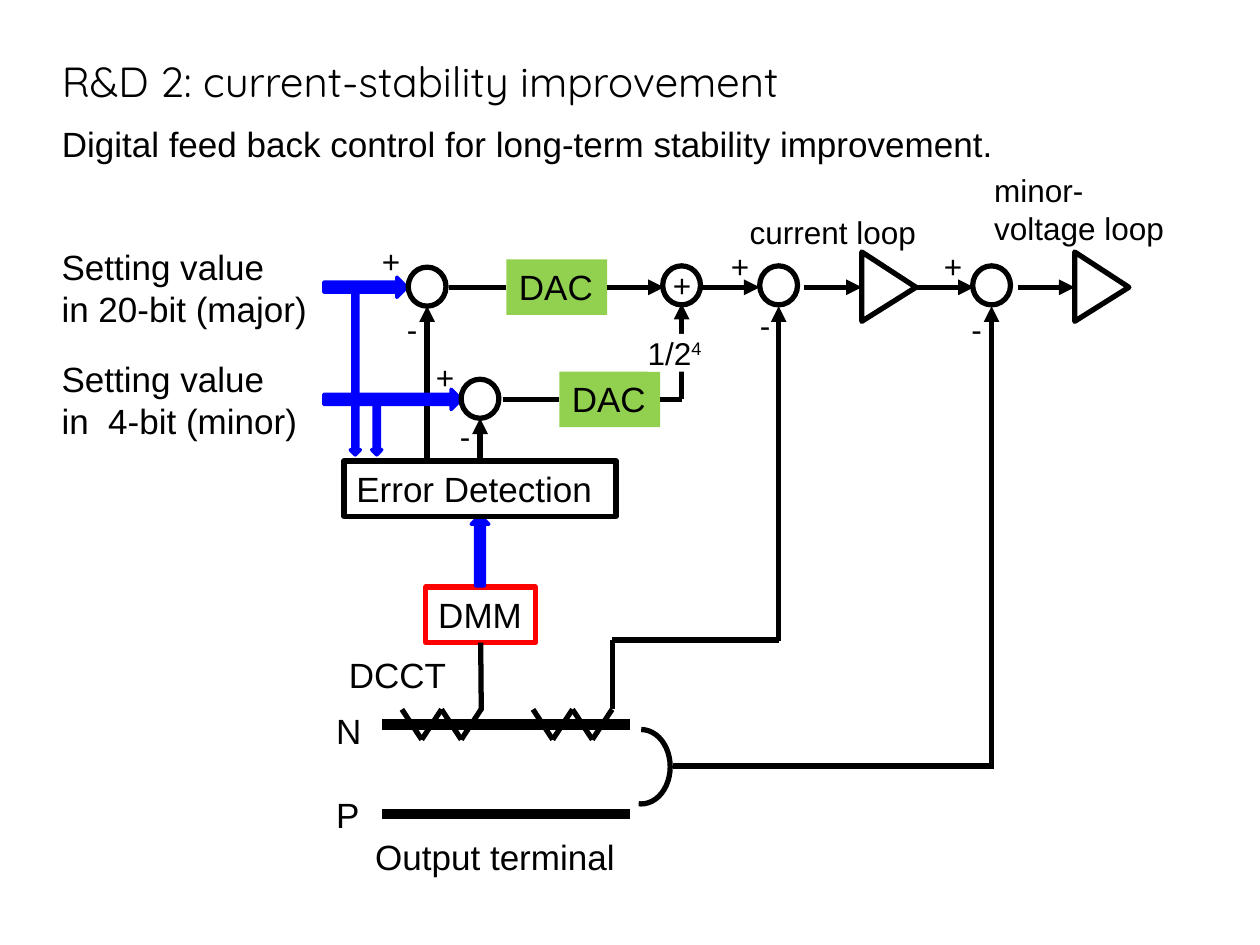
"""Build the current-stability control diagram slide."""
from lxml.etree import SubElement
from pptx import Presentation
from pptx.dml.color import RGBColor
from pptx.enum.shapes import MSO_CONNECTOR, MSO_SHAPE
from pptx.enum.text import MSO_ANCHOR, MSO_AUTO_SIZE, PP_ALIGN
from pptx.oxml.ns import qn
from pptx.util import Inches, Pt

COLORS = {"ink": "000000", "paper": "FFFFFF", "signal": "0000FF",
          "converter": "92D050", "meter": "FF0000"}
TOP, LEFT, BOTTOM, RIGHT = range(4)
MAJOR_Y, MINOR_Y = 2.28, 3.17

LABELS = [
    ("DCCT", 2.67, 5.14, 0.98, 0.44),
    ("Setting value\nin 20-bit (major)", 0.39, 1.9, 2.16, 0.77),
    ("Setting value\nin  4-bit (minor)", 0.39, 2.79, 2.08, 0.77),
]
SMALL_LABELS = [
    ("current loop", 5.95, 1.69, 1.33, 0.3),
    ("minor-\nvoltage loop", 7.89, 1.36, 1.36, 0.61),
]
PLUS_SIGNS = [(5.34, 2.11), (3.03, 1.92), (3.46, 2.84), (5.8, 1.96), (7.49, 1.96)]
MINUS_SIGNS = [(6.03, 2.43), (7.71, 2.46), (3.23, 2.46), (3.65, 3.31)]
SUMMING_POINTS = [(3.24, 2.12), (3.66, 3.01), (5.26, 2.11), (6.03, 2.11), (7.72, 2.11)]
SIGNAL_ARROWS = [
    (2.57, 2.2, 0.66, 0.16, 0),
    (2.57, 3.09, 1.09, 0.16, 0),
    (2.18, 2.93, 1.28, 0.08, 90),
    (2.79, 3.37, 0.4, 0.08, 90),
]
ARROWS = [
    (3.39, 3.66, 3.39, 2.43),
    (5.41, 3.17, 5.41, 2.41),
    (5.57, MAJOR_Y, 6.03, MAJOR_Y),
    (6.38, MAJOR_Y, 6.84, MAJOR_Y),
    (7.27, MAJOR_Y, 7.73, MAJOR_Y),
    (8.08, MAJOR_Y, 8.53, MAJOR_Y),
    (6.18, 5.09, 6.18, 2.43),
    (7.87, 6.08, 7.87, 2.43),
]
WIRES = [
    (4.86, 5.63, 4.86, 5.08),
    (6.18, 5.08, 4.86, 5.08),
    (7.89, 6.08, 5.34, 6.08),
]


def color(name):
    """Return the named palette colour."""
    return RGBColor.from_string(COLORS[name])


def inches(*values):
    """Convert numbers to lengths."""
    return [Inches(value) for value in values]


def write(shape, text, size=20, font="Arial", margin=None):
    """Set left-aligned, unwrapped text on a shape and format its runs."""
    frame = shape.text_frame
    frame.text = text
    frame.word_wrap = False
    frame.auto_size = MSO_AUTO_SIZE.SHAPE_TO_FIT_TEXT
    frame.vertical_anchor = MSO_ANCHOR.TOP
    if margin is not None:
        frame.margin_left = frame.margin_right = margin
        frame.margin_top = frame.margin_bottom = margin
    for para in frame.paragraphs:
        para.alignment = PP_ALIGN.LEFT
        for span in para.runs:
            span.font.size = Pt(size)
            span.font.name = font
            span.font.color.rgb = color("ink")


def fill_placeholder(box, bounds, text, size, font):
    """Move a template placeholder and write a plain line in it."""
    box.left, box.top, box.width, box.height = inches(*bounds)
    write(box, text, size, font)
    para = box.text_frame.paragraphs[0]
    para.space_before = Pt(0)
    properties = para._p.get_or_add_pPr()
    properties.set("marL", "0")
    properties.set("indent", "0")
    SubElement(properties, qn("a:buNone"))


def add_label(page, text, x, y, width, height, size=20, margin=None):
    """Add a text box and return it."""
    box = page.shapes.add_textbox(*inches(x, y, width, height))
    write(box, text, size, margin=margin)
    return box


def style(shape, fill=None, line=None, width=3):
    """Set fill and outline, leaving out whichever is not named."""
    shape.shadow.inherit = False
    if fill:
        shape.fill.solid()
        shape.fill.fore_color.rgb = color(fill)
    else:
        shape.fill.background()
    if line:
        shape.line.color.rgb = color(line)
        shape.line.width = Pt(width)
    else:
        shape.line.fill.background()


def add_figure(page, kind, bounds, **look):
    """Add a styled preset shape."""
    shape = page.shapes.add_shape(kind, *inches(*bounds))
    style(shape, **look)
    return shape


def add_block(page, text, bounds, size=20, margin=None, **look):
    """Add a rectangle with text."""
    block = add_figure(page, MSO_SHAPE.RECTANGLE, bounds, **look)
    write(block, text, size, margin=margin)
    return block


def add_signal_arrow(page, x, y, width, height, rotation):
    """Add a thick digital-signal arrow."""
    arrow = add_figure(page, MSO_SHAPE.RIGHT_ARROW, (x, y, width, height),
                       fill="signal", line="signal", width=2)
    arrow.rotation = rotation


def add_wire(page, ends, width=3, arrow=False, start=None, finish=None):
    """Add a straight line, joined to (shape, side) pairs when given."""
    wire = page.shapes.add_connector(MSO_CONNECTOR.STRAIGHT, *inches(*ends))
    wire.line.color.rgb = color("ink")
    wire.line.width = Pt(width)
    if arrow:
        SubElement(wire.line._get_or_add_ln(), qn("a:tailEnd"), type="triangle")
    SubElement(wire._element.spPr, qn("a:effectLst"))
    if start:
        wire.begin_connect(*start)
    if finish:
        wire.end_connect(*finish)


def add_amplifier(page, x, y):
    """Add a right-pointing amplifier triangle."""
    builder = page.shapes.build_freeform(*inches(x, y))
    corners = [(x + 0.43, y + 0.28), (x, y + 0.55)]
    builder.add_line_segments([inches(*corner) for corner in corners])
    style(builder.convert_to_shape(), line="ink")


def add_coil(page, x):
    """Add the zigzag of a current transformer."""
    high, low, step = 5.63, 5.87, 0.157
    for index in range(4):
        begin, end = (low, high) if index % 2 else (high, low)
        add_wire(page, (x + index * step, begin, x + (index + 1) * step, end))


def add_terminals(page):
    """Add the output terminals, their names, coils and voltage pickup."""
    names = add_label(page, "N\nP\nOutput terminal", 2.57, 5.58, 2.43, 1.45)
    positive, caption = names.text_frame.paragraphs[1:]
    positive.space_before = Pt(24)
    caption._p.get_or_add_pPr().set("marL", str(Inches(0.31)))
    for y in (5.75, 6.46):
        add_wire(page, (3.03, y, 5, y), width=6)
    for x in (3.19, 4.23):
        add_coil(page, x)
    pickup = add_figure(page, MSO_SHAPE.ARC, (4.86, 5.79, 0.46, 0.59), line="ink")
    pickup.adjustments[0], pickup.adjustments[1] = 162, 56.36


def add_control_blocks(page):
    """Add the labelled blocks and the lines joined to them."""
    meter = add_block(page, "DMM", (3.38, 4.66, 0.87, 0.44), line="meter")
    add_signal_arrow(page, 3.53, 4.3, 0.56, 0.14, 270)
    detector = add_block(page, "Error Detection", (2.73, 3.66, 2.16, 0.44),
                         fill="paper", line="ink")
    major, minor = [add_block(page, "DAC", (x, y - 0.22, 0.8, 0.44), fill="converter")
                    for x, y in ((4.02, MAJOR_Y), (4.44, MINOR_Y))]
    add_wire(page, (3.82, 5.64, 3.82, 5.1), finish=(meter, BOTTOM))
    add_wire(page, (3.81, 3.66, 3.81, 3.32), arrow=True, start=(detector, TOP))
    add_wire(page, (3.56, MAJOR_Y, 4.02, MAJOR_Y), finish=(major, LEFT))
    add_wire(page, (4.82, MAJOR_Y, 5.27, MAJOR_Y), arrow=True, start=(major, RIGHT))
    add_wire(page, (3.99, MINOR_Y, 4.44, MINOR_Y), finish=(minor, LEFT))
    add_wire(page, (5.24, MINOR_Y, 5.41, MINOR_Y), start=(minor, RIGHT))


def add_scale_factor(page):
    """Add the 1/2⁴ factor over the minor path."""
    factor = add_block(page, "1/2", (5.14, 2.65, 0.44, 0.3), 18, 0, fill="paper")
    power = factor.text_frame.paragraphs[0].add_run()
    power.text = "4"
    power.font.size = Pt(18)
    power.font.name = "Arial"
    power.font.color.rgb = color("ink")
    power._r.get_or_add_rPr().set("baseline", "30000")


def main():
    """Build and save the deck."""
    deck = Presentation()
    deck.slide_width, deck.slide_height = inches(10, 7.5)
    page = deck.slides.add_slide(deck.slide_layouts[1])
    fill_placeholder(page.shapes.title, (0.39, 0.39, 6.24, 0.5),
                     "R&D 2: current-stability improvement", 24, "Quicksand")
    fill_placeholder(page.placeholders[1], (0.39, 0.92, 7.85, 0.44),
                     "Digital feed back control for long-term stability improvement.",
                     20, "Arial")
    add_terminals(page)
    add_control_blocks(page)
    for ends in ARROWS:
        add_wire(page, ends, arrow=True)
    for ends in WIRES:
        add_wire(page, ends)
    for arrow in SIGNAL_ARROWS:
        add_signal_arrow(page, *arrow)
    for x, y in SUMMING_POINTS:
        add_figure(page, MSO_SHAPE.OVAL, (x, y, 0.3, 0.31), line="ink")
    for x in (6.84, 8.53):
        add_amplifier(page, x, 2)
    add_scale_factor(page)
    for label in LABELS:
        add_label(page, *label)
    for label in SMALL_LABELS:
        add_label(page, *label, size=18, margin=0)
    for sign, width, places in (("+", 0.15, PLUS_SIGNS), ("-", 0.09, MINUS_SIGNS)):
        for x, y in places:
            add_label(page, sign, x, y, width, 0.3, size=18, margin=0)
    deck.save("out.pptx")


if __name__ == "__main__":
    main()
